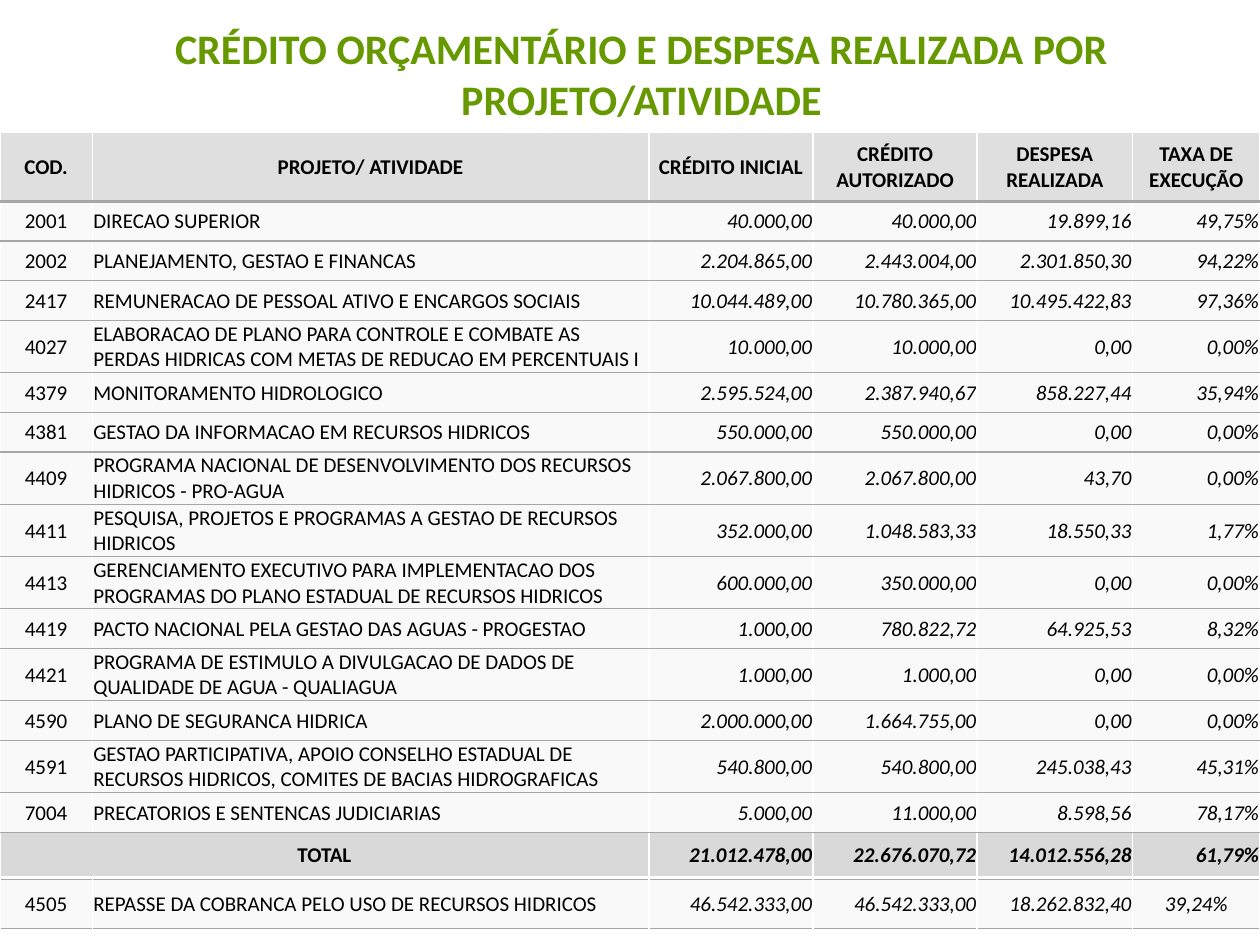
from lxml.etree import SubElement
from pptx import Presentation
from pptx.dml.color import RGBColor
from pptx.enum.text import MSO_ANCHOR, MSO_AUTO_SIZE, PP_ALIGN
from pptx.oxml.ns import qn
from pptx.util import Cm, Pt

GREEN = RGBColor(0x66, 0x99, 0x00)
BLACK = RGBColor(0x00, 0x00, 0x00)
WHITE = RGBColor(0xFF, 0xFF, 0xFF)
RULE_GREY = RGBColor(0xA6, 0xA6, 0xA6)
HEADER_GREY = RGBColor(0xDF, 0xDF, 0xDF)
TOTAL_GREY = RGBColor(0xD9, 0xD9, 0xD9)
BODY_GREY = RGBColor(0xF9, 0xF9, 0xF9)

CENTER, LEFT, RIGHT = PP_ALIGN.CENTER, PP_ALIGN.LEFT, PP_ALIGN.RIGHT
COLUMN_WIDTHS = [1.86, 11.22, 3.31, 3.31, 3.13, 2.57]
BODY_ALIGNMENTS = [CENTER, LEFT] + [RIGHT] * 4
THIN, THICK = 1, 2.25

TITLE = "CRÉDITO ORÇAMENTÁRIO E DESPESA REALIZADA POR PROJETO/ATIVIDADE"
HEADINGS = ["COD.", "PROJETO/ ATIVIDADE", "CRÉDITO INICIAL", "CRÉDITO AUTORIZADO",
            "DESPESA REALIZADA", "TAXA DE EXECUÇÃO"]
PROJECTS = [
    ["2001", "DIRECAO SUPERIOR", "40.000,00", "40.000,00", "19.899,16", "49,75%"],
    ["2002", "PLANEJAMENTO, GESTAO E FINANCAS",
     "2.204.865,00", "2.443.004,00", "2.301.850,30", "94,22%"],
    ["2417", "REMUNERACAO DE PESSOAL ATIVO E ENCARGOS SOCIAIS",
     "10.044.489,00", "10.780.365,00", "10.495.422,83", "97,36%"],
    ["4027", "ELABORACAO DE PLANO PARA CONTROLE E COMBATE AS PERDAS HIDRICAS "
     "COM METAS DE REDUCAO EM PERCENTUAIS I", "10.000,00", "10.000,00", "0,00", "0,00%"],
    ["4379", "MONITORAMENTO HIDROLOGICO",
     "2.595.524,00", "2.387.940,67", "858.227,44", "35,94%"],
    ["4381", "GESTAO DA INFORMACAO EM RECURSOS HIDRICOS",
     "550.000,00", "550.000,00", "0,00", "0,00%"],
    ["4409", "PROGRAMA NACIONAL DE DESENVOLVIMENTO DOS RECURSOS HIDRICOS - PRO-AGUA",
     "2.067.800,00", "2.067.800,00", "43,70", "0,00%"],
    ["4411", "PESQUISA, PROJETOS E PROGRAMAS A GESTAO DE RECURSOS HIDRICOS",
     "352.000,00", "1.048.583,33", "18.550,33", "1,77%"],
    ["4413", "GERENCIAMENTO EXECUTIVO PARA IMPLEMENTACAO DOS PROGRAMAS DO PLANO "
     "ESTADUAL DE RECURSOS HIDRICOS", "600.000,00", "350.000,00", "0,00", "0,00%"],
    ["4419", "PACTO NACIONAL PELA GESTAO DAS AGUAS - PROGESTAO",
     "1.000,00", "780.822,72", "64.925,53", "8,32%"],
    ["4421", "PROGRAMA DE ESTIMULO A DIVULGACAO DE DADOS DE QUALIDADE DE AGUA - QUALIAGUA",
     "1.000,00", "1.000,00", "0,00", "0,00%"],
    ["4590", "PLANO DE SEGURANCA HIDRICA",
     "2.000.000,00", "1.664.755,00", "0,00", "0,00%"],
    ["4591", "GESTAO PARTICIPATIVA, APOIO CONSELHO ESTADUAL DE RECURSOS HIDRICOS, "
     "COMITES DE BACIAS HIDROGRAFICAS", "540.800,00", "540.800,00", "245.038,43", "45,31%"],
    ["7004", "PRECATORIOS E SENTENCAS JUDICIARIAS",
     "5.000,00", "11.000,00", "8.598,56", "78,17%"],
]
TOTAL = ["TOTAL", "", "21.012.478,00", "22.676.070,72", "14.012.556,28", "61,79%"]
TRANSFER = ["4505", "REPASSE DA COBRANCA PELO USO DE RECURSOS HIDRICOS",
            "46.542.333,00", "46.542.333,00", "18.262.832,40", "39,24%"]


class BudgetSlide:
    font_name = "Calibri"
    title_size = Pt(24)
    cell_size = Pt(12)

    def __init__(self, presentation):
        self.slide = presentation.slides.add_slide(presentation.slide_layouts[5])

    def add_run(self, paragraph, text, size, color, bold=False, italic=False):
        run = paragraph.add_run()
        run.text = text
        font = run.font
        font.name, font.size, font.bold, font.italic = self.font_name, size, bold, italic
        font.color.rgb = color

    def set_title(self, text, left, top, width, height):
        title = self.slide.shapes.title
        title.left, title.top, title.width, title.height = left, top, width, height
        frame = title.text_frame
        frame.word_wrap = True
        frame.auto_size = MSO_AUTO_SIZE.NONE
        frame.vertical_anchor = MSO_ANCHOR.TOP
        frame.paragraphs[0].alignment = CENTER
        self.add_run(frame.paragraphs[0], text, self.title_size, GREEN, bold=True)

    def add_table(self, top, row_heights):
        frame = self.slide.shapes.add_table(
            len(row_heights), len(COLUMN_WIDTHS), 0, top,
            Cm(sum(COLUMN_WIDTHS)), Cm(sum(row_heights)))
        table = frame.table
        table.first_row = table.horz_banding = False
        for column, width in zip(table.columns, COLUMN_WIDTHS):
            column.width = Cm(width)
        for row, height in zip(table.rows, row_heights):
            row.height = Cm(height)
        return table

    def fill_row(self, row, texts, fill, alignments=BODY_ALIGNMENTS, bold=False,
                 italic_from=2, top=(RULE_GREY, THIN), bottom=(RULE_GREY, THIN)):
        """Fill one row; columns from italic_from onwards are in italics."""
        for index, (cell, text, alignment) in enumerate(zip(row.cells, texts, alignments)):
            self.set_borders(cell, top, bottom)
            cell.fill.solid()
            cell.fill.fore_color.rgb = fill
            cell.vertical_anchor = MSO_ANCHOR.MIDDLE
            cell.margin_left = cell.margin_right = cell.margin_top = Cm(0.02)
            cell.margin_bottom = 0
            paragraph = cell.text_frame.paragraphs[0]
            paragraph.alignment = alignment
            if text:
                self.add_run(paragraph, text, self.cell_size, BLACK, bold,
                             index >= italic_from)

    def set_borders(self, cell, top, bottom):
        side = (WHITE, THIN)
        properties = cell._tc.get_or_add_tcPr()
        for tag, (color, width) in zip(("a:lnL", "a:lnR", "a:lnT", "a:lnB"),
                                       (side, side, top, bottom)):
            line = SubElement(properties, qn(tag), w=str(Pt(width)))
            solid = SubElement(line, qn("a:solidFill"))
            SubElement(solid, qn("a:srgbClr"), val=str(color))


def main():
    presentation = Presentation()
    presentation.slide_width, presentation.slide_height = Cm(25.4), Cm(19.05)
    budget = BudgetSlide(presentation)
    budget.set_title(TITLE, Cm(1.5), Cm(0.33), Cm(22.86), Cm(2.21))

    projects = budget.add_table(Cm(2.67), [1.39] + [0.8] * len(PROJECTS) + [0.9])
    header, *body, total = projects.rows
    header_rule = (RULE_GREY, THICK)
    budget.fill_row(header, HEADINGS, HEADER_GREY, [CENTER] * 6, bold=True, italic_from=6,
                    top=(WHITE, THIN), bottom=header_rule)
    for index, (row, project) in enumerate(zip(body, PROJECTS)):
        budget.fill_row(row, project, BODY_GREY,
                        top=(RULE_GREY, THIN) if index else header_rule)
    budget.fill_row(total, TOTAL, TOTAL_GREY, bold=True, bottom=(WHITE, THIN))
    total.cells[0].merge(total.cells[1])

    transfer = budget.add_table(Cm(17.73), [0.99])
    budget.fill_row(transfer.rows[0], TRANSFER, BODY_GREY, BODY_ALIGNMENTS[:5] + [CENTER])

    presentation.save("out.pptx")


if __name__ == "__main__":
    main()
